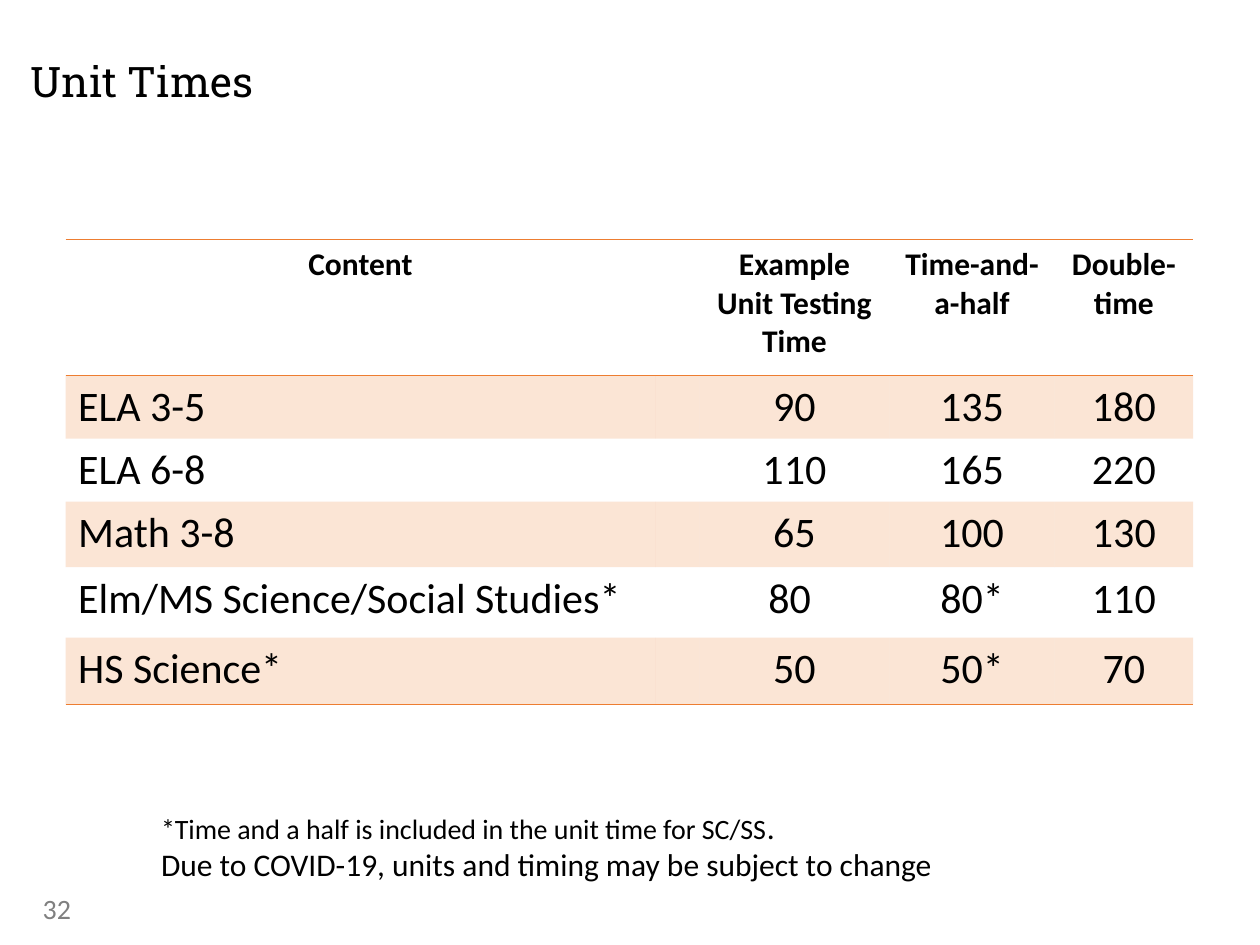
from dataclasses import dataclass

from lxml import etree
from pptx import Presentation
from pptx.dml.color import RGBColor
from pptx.enum.text import MSO_ANCHOR, MSO_AUTO_SIZE, PP_ALIGN
from pptx.oxml.ns import qn
from pptx.util import Inches, Pt

LEFT, CENTER = PP_ALIGN.LEFT, PP_ALIGN.CENTER
TOP, MIDDLE = MSO_ANCHOR.TOP, MSO_ANCHOR.MIDDLE
GROW = MSO_AUTO_SIZE.SHAPE_TO_FIT_TEXT
NO_STYLE_NO_GRID = "{2D5ABB26-0587-4C30-8999-92F81FD0307C}"


@dataclass(frozen=True)
class Theme:
    body_font: str = "Calibri"
    title_font: str = "Roboto Slab"
    text: str = "000000"
    muted: str = "808080"
    accent: str = "ED7D31"
    band_alpha: int = 20
    large: int = 24
    medium: int = 18
    small: int = 16
    rule: int = 1


theme = Theme()


def write(frame, text, size=theme.medium, font=theme.body_font, color=theme.text,
          bold=False, align=LEFT, spacing=None):
    """Write one paragraph per line; a line is a string or a list of (text, size) runs."""
    lines = [text] if isinstance(text, str) else text
    for index, line in enumerate(lines):
        paragraph = frame.paragraphs[0] if index == 0 else frame.add_paragraph()
        paragraph.alignment = align
        paragraph.line_spacing = spacing
        for run_text, run_size in [(line, size)] if isinstance(line, str) else line:
            run = paragraph.add_run()
            run.text = run_text
            run.font.name = font
            run.font.size = Pt(run_size)
            run.font.bold = bold
            run.font.color.rgb = RGBColor.from_string(color)


def add_rule(cell, edge):
    """Draw an accent line on a cell edge: lnT or lnB."""
    line = etree.SubElement(cell._tc.get_or_add_tcPr(), qn(f"a:{edge}"), w=str(Pt(theme.rule)))
    fill = etree.SubElement(line, qn("a:solidFill"))
    etree.SubElement(fill, qn("a:srgbClr"), val=theme.accent)


presentation = Presentation()
presentation.slide_width, presentation.slide_height = Inches(10), Inches(7.5)
slide = presentation.slides.add_slide(presentation.slide_layouts[6])
margin = Inches(0.24)

# Title
title = slide.shapes.add_textbox(margin, Inches(0.34), Inches(9.51), Inches(0.65)).text_frame
title.word_wrap = True
title.vertical_anchor = MIDDLE
title.margin_left = title.margin_right = title.margin_top = title.margin_bottom = 0
write(title, "Unit Times", size=theme.large, font=theme.title_font, spacing=0.9)

# Table grid; the second column is a narrow empty gap
column_widths = [4.68, 0.35, 1.51, 1.31, 1.1]
row_heights = [1.08, 0.5, 0.45, 0.52, 0.56, 0.53]
rows = [
    ["Content", "", ["Example", "Unit Testing Time"], "Time-and-a-half", "Double-time"],
    ["ELA 3-5", "", "90", "135", "180"],
    ["ELA 6-8", "", "110", "165", "220"],
    ["Math 3-8", "", "65", "100", "130"],
    ["Elm/MS Science/Social Studies*", "", "80 ", "80*", "110"],
    ["HS Science*", "", "50", "50*", "70"],
]
table = slide.shapes.add_table(
    len(rows), len(column_widths), Inches(0.52), Inches(1.9),
    Inches(sum(column_widths)), Inches(sum(row_heights))).table
table._tbl.tblPr.find(qn("a:tableStyleId")).text = NO_STYLE_NO_GRID
for column, width in zip(table.columns, column_widths):
    column.width = Inches(width)
for row, height in zip(table.rows, row_heights):
    row.height = Inches(height)

# Table cells: ruled header, tinted odd rows, closing rule
for row_index, values in enumerate(rows):
    is_header = row_index == 0
    for column_index, value in enumerate(values):
        cell = table.cell(row_index, column_index)
        cell.vertical_anchor = TOP
        if value:
            write(cell.text_frame, value, bold=is_header,
                  size=theme.medium if is_header else theme.large,
                  align=CENTER if is_header or column_index else LEFT)
        if is_header:
            add_rule(cell, "lnT")
        if is_header or row_index == len(rows) - 1:
            add_rule(cell, "lnB")
        if row_index % 2:
            cell.fill.solid()
            cell.fill.fore_color.rgb = RGBColor.from_string(theme.accent)
            tint = cell._tc.tcPr.find(qn("a:solidFill")).find(qn("a:srgbClr"))
            etree.SubElement(tint, qn("a:alpha"), val=str(theme.band_alpha * 1000))
        else:
            cell.fill.background()

# Footnote
footnote = slide.shapes.add_textbox(Inches(1.18), Inches(6.36), Inches(6.37), Inches(0.71)).text_frame
footnote.word_wrap = False
footnote.auto_size = GROW
write(footnote, [
    [("*Time and a half is included in the unit time for SC/SS", theme.small), (".", theme.medium)],
    "Due to COVID-19, units and timing may be subject to change",
])

# Slide number
number = slide.shapes.add_textbox(margin, Inches(7.03), Inches(2.25), Inches(0.4)).text_frame
number.word_wrap = True
write(number, "32", size=theme.small, color=theme.muted)

presentation.save("out.pptx")
